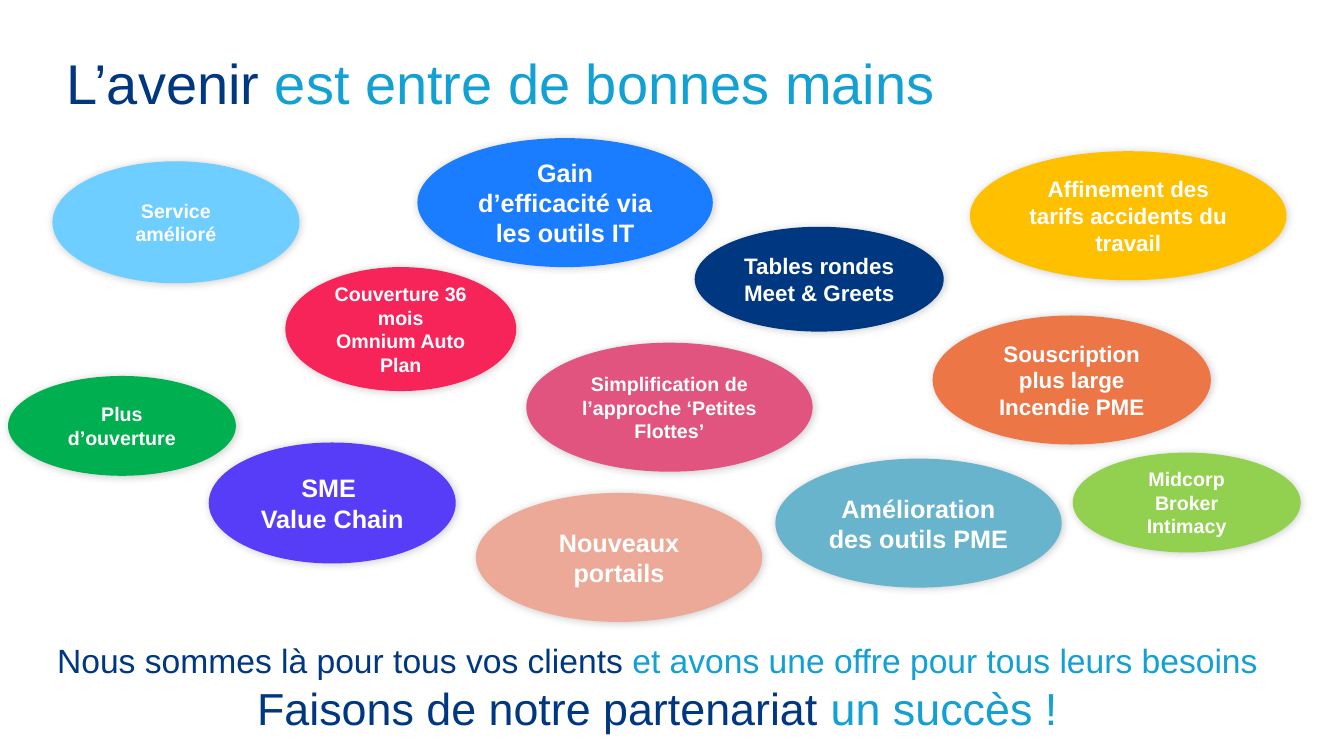
"""Build the slide on the future of the partnership, with its cloud of promises."""
from lxml import etree
from pptx import Presentation
from pptx.dml.color import RGBColor
from pptx.enum.shapes import MSO_SHAPE
from pptx.enum.text import MSO_ANCHOR, PP_ALIGN
from pptx.oxml.ns import qn
from pptx.util import Inches, Pt

THEME = {
    "font": "Arial", "navy": "003781", "sky": "13A0D3", "white": "FFFFFF",
    "title": 40, "closing": 24, "call": 32, "large": 18, "medium": 16, "small": 14,
}

TITLE = [("title", "L’avenir ", "est entre de bonnes mains")]
CLOSING = [
    ("closing", "Nous sommes là pour tous vos clients ",
     "et avons une offre pour tous leurs besoins"),
    ("call", "Faisons de notre partenariat ", "un succès !"),
]
BUBBLES = [
    (0.52, 1.6, 2.45, 1.21, "6DCEFF", "small", ["Service amélioré"]),
    (4.14, 1.37, 2.93, 1.28, "1A7CFF", "large", ["Gain d’efficacité via les outils IT"]),
    (9.62, 1.5, 3.14, 1.28, "FFC000", "medium", ["Affinement des tarifs accidents du travail"]),
    (2.83, 2.65, 2.29, 1.23, "F62459", "small", ["Couverture 36 mois\vOmnium Auto Plan"]),
    (5.22, 3.4, 2.84, 1.28, "E0547F", "small", ["Simplification de l’approche ‘Petites Flottes’"]),
    (9.25, 3.13, 2.76, 1.28, "ED7647", "medium", ["Souscription plus large Incendie PME"]),
    (2.07, 4.39, 2.45, 1.2, "573CF8", "large", ["SME \vValue Chain"]),
    (4.72, 4.89, 2.84, 1.28, "EDA997", "large", ["Nouveaux portails"]),
    (7.69, 4.55, 2.84, 1.28, "68B4CC", "large", ["Amélioration des outils PME"]),
    (6.89, 2.25, 2.47, 1.04, "003781", "medium", ["Tables rondes", "Meet & Greets"]),
    (0.08, 3.73, 2.26, 0.99, "00B050", "small", ["Plus d’ouverture"]),
    (10.64, 4.49, 2.26, 0.99, "92D050", "small", ["Midcorp", "Broker Intimacy"]),
]


def add_run(p, text, size, color, bold=False):
    r = p.add_run()
    r.text = text
    r.font.name = THEME["font"]
    r.font.size = Pt(THEME[size])
    r.font.bold = bold
    r.font.color.rgb = RGBColor.from_string(color)


def add_paragraph(tf, index, align):
    p = tf.add_paragraph() if index else tf.paragraphs[0]
    p.alignment = align
    return p


def add_two_tone(s, box, lines, align):
    tf = s.shapes.add_textbox(*map(Inches, box)).text_frame
    tf.word_wrap = True
    tf.margin_left = tf.margin_right = tf.margin_top = tf.margin_bottom = 0
    for i, (size, lead, rest) in enumerate(lines):
        p = add_paragraph(tf, i, align)
        add_run(p, lead, size, THEME["navy"])
        add_run(p, rest, size, THEME["sky"])


def add_shadow(sp):
    sp.shadow.inherit = False
    effects = sp._element.spPr.find(qn("a:effectLst"))
    shadow = etree.SubElement(effects, qn("a:outerShdw"), blurRad=str(Pt(6)),
                              dist=str(Pt(1)), dir=str(45 * 60000))
    color = etree.SubElement(shadow, qn("a:srgbClr"), val="000000")
    etree.SubElement(color, qn("a:alpha"), val="20000")


def add_bubble(s, x, y, w, h, fill, size, lines):
    sp = s.shapes.add_shape(MSO_SHAPE.OVAL, *map(Inches, (x, y, w, h)))
    sp.fill.solid()
    sp.fill.fore_color.rgb = RGBColor.from_string(fill)
    sp.line.fill.background()
    add_shadow(sp)
    tf = sp.text_frame
    tf.word_wrap = True
    tf.vertical_anchor = MSO_ANCHOR.MIDDLE
    for i, line in enumerate(lines):
        p = add_paragraph(tf, i, PP_ALIGN.CENTER)
        for j, part in enumerate(line.split("\v")):
            if j:
                p.add_line_break()
            add_run(p, part, size, THEME["white"], bold=True)


def main():
    prs = Presentation()
    prs.slide_width, prs.slide_height = Inches(13.33), Inches(7.5)
    s = prs.slides.add_slide(prs.slide_layouts[6])
    add_two_tone(s, (0.66, 0.48, 11.99, 5.91), TITLE, PP_ALIGN.LEFT)
    add_two_tone(s, (0.37, 6.35, 12.3, 1), CLOSING, PP_ALIGN.CENTER)
    for bubble in BUBBLES:
        add_bubble(s, *bubble)
    prs.save("out.pptx")


if __name__ == "__main__":
    main()
